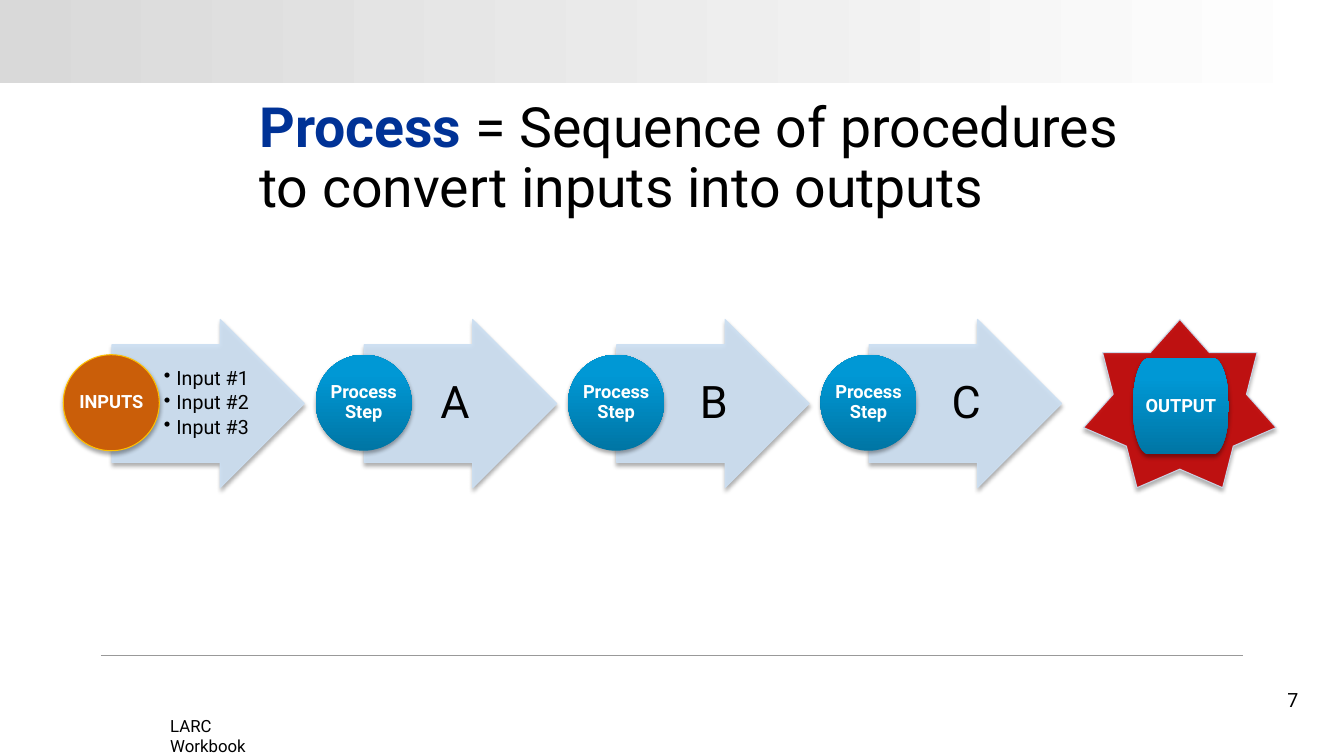
from lxml import etree
from pptx import Presentation
from pptx.dml.color import RGBColor
from pptx.enum.shapes import MSO_CONNECTOR, MSO_SHAPE
from pptx.enum.text import MSO_ANCHOR, MSO_AUTO_SIZE, PP_ALIGN
from pptx.oxml import parse_xml
from pptx.oxml.ns import nsdecls, qn
from pptx.util import Pt

RECTANGLE, ARROW, OVAL = MSO_SHAPE.RECTANGLE, MSO_SHAPE.RIGHT_ARROW, MSO_SHAPE.OVAL
STAR, TERMINATOR = MSO_SHAPE.STAR_7_POINT, MSO_SHAPE.FLOWCHART_TERMINATOR
STRAIGHT = MSO_CONNECTOR.STRAIGHT
LEFT, CENTER, RIGHT = PP_ALIGN.LEFT, PP_ALIGN.CENTER, PP_ALIGN.RIGHT
TOP, MIDDLE = MSO_ANCHOR.TOP, MSO_ANCHOR.MIDDLE
NO_AUTOFIT = MSO_AUTO_SIZE.NONE
FONT = "Roboto"
BLUE_STOPS = [(0, "0075A4"), (80, "0098D5"), (100, "0099D6")]
PALE = "CCDFF2"

deck = Presentation()
deck.slide_width, deck.slide_height = Pt(960), Pt(540)
page = deck.slides.add_slide(deck.slide_layouts[5])


def add_figure(kind, place, fill, line=None, angle=270, opacity=100, shadow=True):
    figure = page.shapes.add_shape(kind, *map(Pt, place))
    figure.shadow.inherit = False
    if isinstance(fill, list):
        stops = "".join(
            f'<a:gs pos="{pos * 1000}"><a:srgbClr val="{color}"/></a:gs>' for pos, color in fill)
        gradient = parse_xml(
            f'<a:gradFill {nsdecls("a")} rotWithShape="1"><a:gsLst>{stops}</a:gsLst>'
            f'<a:lin ang="{angle * 60000}" scaled="0"/></a:gradFill>')
        figure._element.spPr.find(qn("a:prstGeom")).addnext(gradient)
    else:
        figure.fill.solid()
        figure.fill.fore_color.rgb = RGBColor.from_string(fill)
    if line:
        figure.line.color.rgb = RGBColor.from_string(line)
        figure.line.width = Pt(0.75)
    else:
        figure.line.fill.background()
    if opacity < 100:
        for color in figure._element.spPr.iter(qn("a:srgbClr")):
            etree.SubElement(color, qn("a:alpha"), val=str(opacity * 1000))
    if shadow:
        effects = figure._element.spPr.find(qn("a:effectLst"))
        effects.append(parse_xml(
            f'<a:outerShdw {nsdecls("a")} blurRad="{Pt(3.1)}" dist="{Pt(1.8)}" dir="5400000" '
            'rotWithShape="0"><a:srgbClr val="000000"><a:alpha val="35000"/></a:srgbClr></a:outerShdw>'))
    return figure


def write(box, lines, size, color="000000", bold=False, align=LEFT, anchor=MIDDLE,
          insets=(0, 0, 0, 0), spacing=0.9, bullets=False):
    frame = box.text_frame
    frame.word_wrap = True
    frame.vertical_anchor = anchor
    (frame.margin_left, frame.margin_top,
     frame.margin_right, frame.margin_bottom) = map(Pt, insets)
    frame.text = "\n".join(lines)
    for para in frame.paragraphs:
        if bullets:
            properties = para._p.get_or_add_pPr()
            properties.set("marL", str(Pt(9)))
            properties.set("indent", str(Pt(-9)))
            etree.SubElement(properties, qn("a:buChar"), char="•")
            para.space_after = Pt(2.1)
        para.alignment = align
        para.line_spacing = spacing
        para.font.name = FONT
        para.font.size = Pt(size)
        para.font.bold = bold
        para.font.color.rgb = RGBColor.from_string(color)


add_figure(RECTANGLE, (0, 0, 960, 59), [(0, "D9D9D9"), (100, "FFFFFF")], angle=0, shadow=False)

rule = page.shapes.add_connector(STRAIGHT, Pt(72), Pt(468), Pt(888), Pt(468))
rule.line.color.rgb = RGBColor.from_string("999999")
rule.line.width = Pt(0.75)
etree.SubElement(rule._element.spPr, qn("a:effectLst"))

title = page.shapes.title
title.left, title.top, title.width, title.height = Pt(178), Pt(67.7), Pt(628.5), Pt(104.4)
title.text_frame.auto_size = NO_AUTOFIT
title.text_frame.word_wrap = True
title.text_frame.vertical_anchor = TOP
title_para = title.text_frame.paragraphs[0]
title_para.alignment = LEFT
title_para.line_spacing = 0.9
for text, color, bold in [("Process", "003296", True),
                          (" = Sequence of procedures to convert inputs into outputs", "000000", False)]:
    span = title_para.add_run()
    span.text = text
    span.font.name = FONT
    span.font.size = Pt(39.6)
    span.font.bold = bold
    span.font.color.rgb = RGBColor.from_string(color)

stages = [
    ("INPUTS", ["Input #1", "Input #2", "Input #3"], 14, LEFT, (3, 1, 1, 1)),
    ("Process Step", ["A"], 32, LEFT, (20.2, 1.5, 3, 1.5)),
    ("Process Step", ["B"], 32, CENTER, (6.5, 1.5, 3, 1.5)),
    ("Process Step", ["C"], 32, CENTER, (6.5, 1.5, 3, 1.5)),
]
for index, (label, lines, size, align, insets) in enumerate(stages):
    left = 45.2 + 180.3 * index
    is_input = label == "INPUTS"
    arrow = add_figure(ARROW, (left + 34.7, 228.2, 137.5, 120.2), PALE, PALE, opacity=90)
    arrow.adjustments[0], arrow.adjustments[1] = 0.7, 0.5
    detail = page.shapes.add_textbox(Pt(left + 68.8), Pt(246.2), Pt(67), Pt(84.2))
    write(detail, lines, size, align=align, insets=insets, bullets=is_input)
    circle = add_figure(OVAL, (left, 253.4, 68.6, 68.6),
                        "CA5E09" if is_input else BLUE_STOPS, "FFC000" if is_input else None)
    write(circle, [label], 13, "FFFFFF", True, CENTER)

add_figure(STAR, (774, 228.2, 137.5, 120.2), "C00000", PALE, opacity=90)
output = add_figure(TERMINATOR, (809.2, 256, 68.6, 68.6), BLUE_STOPS)
write(output, ["OUTPUT"], 13, "FFFFFF", True, CENTER)

number = page.shapes.add_textbox(Pt(711.4), Pt(486.7), Pt(216), Pt(28.8))
write(number, ["7"], 14, align=RIGHT, insets=(0, 3.6, 0, 3.6))
footer = page.shapes.add_textbox(Pt(114.5), Pt(507.6), Pt(96), Pt(21.8))
write(footer, ["LARC Workbook"], 12, anchor=TOP, insets=(7.2, 3.6, 7.2, 3.6), spacing=1)

deck.save("out.pptx")
